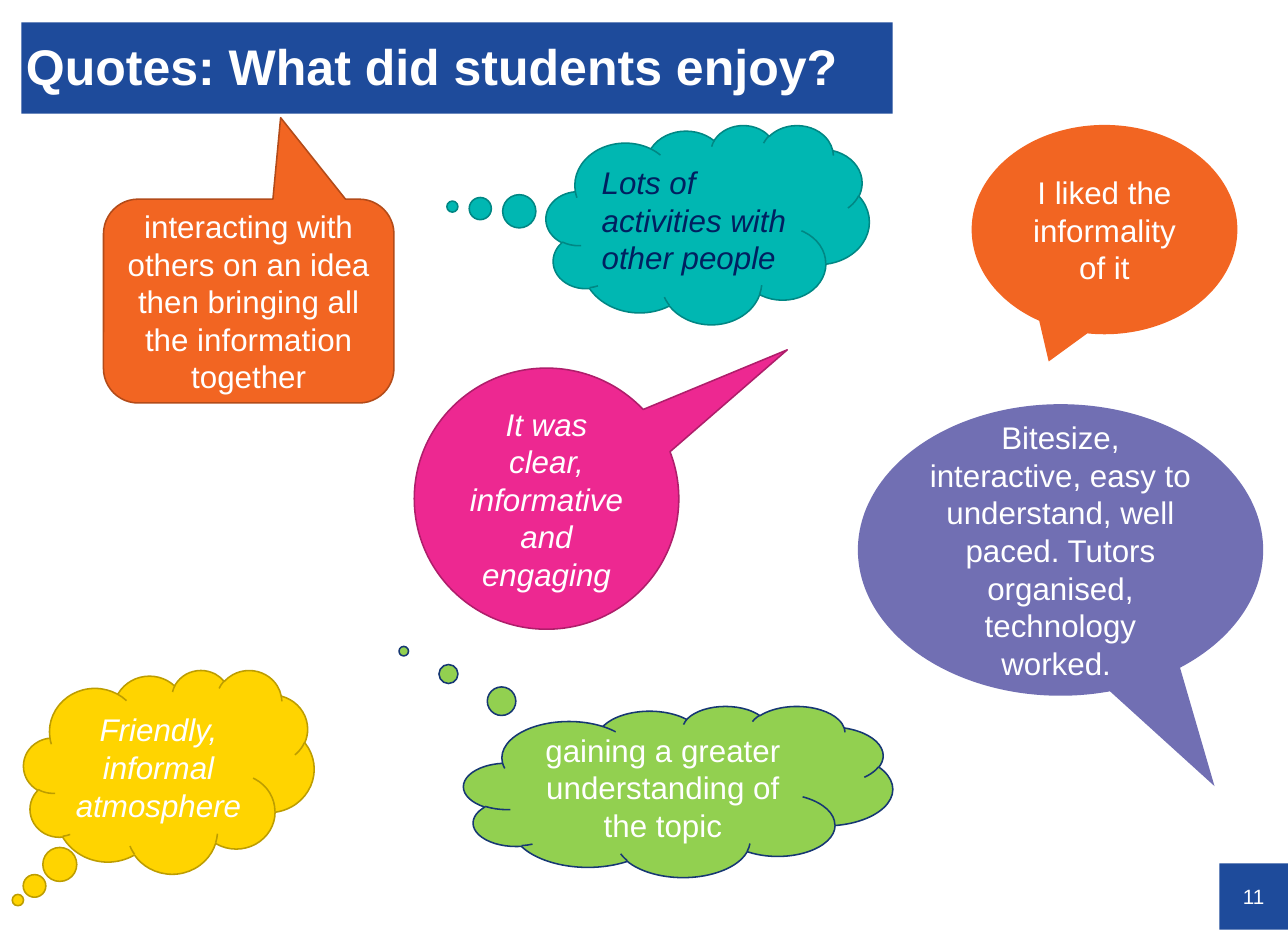
from dataclasses import dataclass
from typing import Optional

import pptx
import pptx.dml.color
import pptx.enum.shapes
import pptx.enum.text
import pptx.util

Kind = pptx.enum.shapes.MSO_SHAPE
Align = pptx.enum.text.PP_ALIGN
Inches = pptx.util.Inches


@dataclass(frozen=True)
class Theme:
    font: str = "Arial"
    title_size: float = 32
    quote_size: float = 20
    number_size: float = 13.2
    outline: float = 1
    white: str = "FFFFFF"
    blue: str = "1E4B9B"
    navy: str = "002060"
    orange: str = "F26522"
    orange_edge: str = "B34B19"
    teal: str = "00B7B2"
    teal_edge: str = "008784"
    yellow: str = "FFD400"
    yellow_edge: str = "BD9D00"
    pink: str = "ED2891"
    pink_edge: str = "AF1E6B"
    green: str = "92D050"
    green_edge: str = "163773"
    purple: str = "716FB3"


THEME = Theme()
SLIDE_WIDTH = Inches(11.44)
SLIDE_HEIGHT = Inches(8.27)


@dataclass(frozen=True)
class Panel:
    """A filled shape with text; area is left, top, width, height in % of the slide."""
    text: str
    kind: Kind
    area: tuple[float, float, float, float]
    fill: str
    edge: Optional[str] = None
    pointer: tuple[float, ...] = ()
    ink: str = THEME.white
    size: float = THEME.quote_size
    bold: bool = False
    italic: bool = False
    align: Align = Align.CENTER
    line_spacing: Optional[float] = None
    insets: tuple[float, float, float, float] = (0.1, 0.05, 0.1, 0.05)


# Title bar and page number
TITLE = Panel("Quotes: What did students enjoy?", Kind.RECTANGLE,
              (1.66, 2.42, 67.66, 9.79), THEME.blue, size=THEME.title_size,
              bold=True, align=Align.LEFT, line_spacing=0.9,
              insets=(0.04, 0.02, 0, 0))
PAGE_NUMBER = Panel("11", Kind.RECTANGLE, (94.67, 92.74, 5.33, 7.13), THEME.blue,
                    size=THEME.number_size, insets=(0, 0, 0, 0))

# Student quotes, from back to front
QUOTES = [
    Panel("interacting with others on an idea then bringing all the information together",
          Kind.ROUNDED_RECTANGULAR_CALLOUT, (8.04, 21.4, 22.55, 21.89),
          THEME.orange, THEME.orange_edge, (0.11, -0.9, 0.17)),
    Panel("Lots of activities with other people",
          Kind.CLOUD_CALLOUT, (42.4, 13.42, 25.09, 21.4),
          THEME.teal, THEME.teal_edge, (-0.79, -0.09),
          ink=THEME.navy, italic=True, align=Align.LEFT),
    Panel("Friendly, informal atmosphere",
          Kind.CLOUD_CALLOUT, (1.84, 71.95, 22.55, 21.89),
          THEME.yellow, THEME.yellow_edge, (-0.52, 0.63), italic=True),
    Panel("It was clear, informative and engaging",
          Kind.OVAL_CALLOUT, (32.17, 39.54, 20.54, 28.05),
          THEME.pink, THEME.pink_edge, (0.91, -0.57), italic=True),
    Panel("gaining a greater understanding of the topic",
          Kind.CLOUD_CALLOUT, (36.01, 75.82, 33.3, 18.38),
          THEME.green, THEME.green_edge, (-0.64, -0.82)),
    Panel("I liked the informality of it",
          Kind.OVAL_CALLOUT, (75.44, 13.42, 20.63, 22.49),
          THEME.orange, pointer=(-0.21, 0.63)),
    Panel("Bitesize, interactive, easy to understand, well paced. "
          "Tutors organised, technology worked. ",
          Kind.OVAL_CALLOUT, (66.61, 43.41, 31.47, 31.32),
          THEME.purple, pointer=(0.38, 0.81)),
]


def set_all(target: object, values: dict[str, object]) -> None:
    for name, value in values.items():
        setattr(target, name, value)


def colour(code: str) -> pptx.dml.color.RGBColor:
    return pptx.dml.color.RGBColor.from_string(code)


def draw_panel(page: pptx.slide.Slide, panel: Panel) -> None:
    left, top, width, height = panel.area
    shape = page.shapes.add_shape(
        panel.kind,
        int(SLIDE_WIDTH * left / 100), int(SLIDE_HEIGHT * top / 100),
        int(SLIDE_WIDTH * width / 100), int(SLIDE_HEIGHT * height / 100))
    shape.shadow.inherit = False
    for index, value in enumerate(panel.pointer):
        shape.adjustments[index] = value

    # Fill and outline
    shape.fill.solid()
    shape.fill.fore_color.rgb = colour(panel.fill)
    if panel.edge:
        shape.line.color.rgb = colour(panel.edge)
        shape.line.width = pptx.util.Pt(THEME.outline)
    else:
        shape.line.fill.background()

    # Text
    frame = shape.text_frame
    sides = ("margin_left", "margin_top", "margin_right", "margin_bottom")
    set_all(frame, {side: Inches(inset) for side, inset in zip(sides, panel.insets)})
    set_all(frame, {"word_wrap": True,
                    "vertical_anchor": pptx.enum.text.MSO_ANCHOR.MIDDLE})
    para = frame.paragraphs[0]
    set_all(para, {"alignment": panel.align, "line_spacing": panel.line_spacing})
    span = para.add_run()
    span.text = panel.text
    set_all(span.font, {"name": THEME.font, "size": pptx.util.Pt(panel.size),
                        "bold": panel.bold, "italic": panel.italic})
    span.font.color.rgb = colour(panel.ink)


def main() -> None:
    deck = pptx.Presentation()
    set_all(deck, {"slide_width": SLIDE_WIDTH, "slide_height": SLIDE_HEIGHT})
    page = deck.slides.add_slide(deck.slide_layouts[6])
    for panel in [PAGE_NUMBER, TITLE, *QUOTES]:
        draw_panel(page, panel)
    deck.save("out.pptx")


if __name__ == "__main__":
    main()
